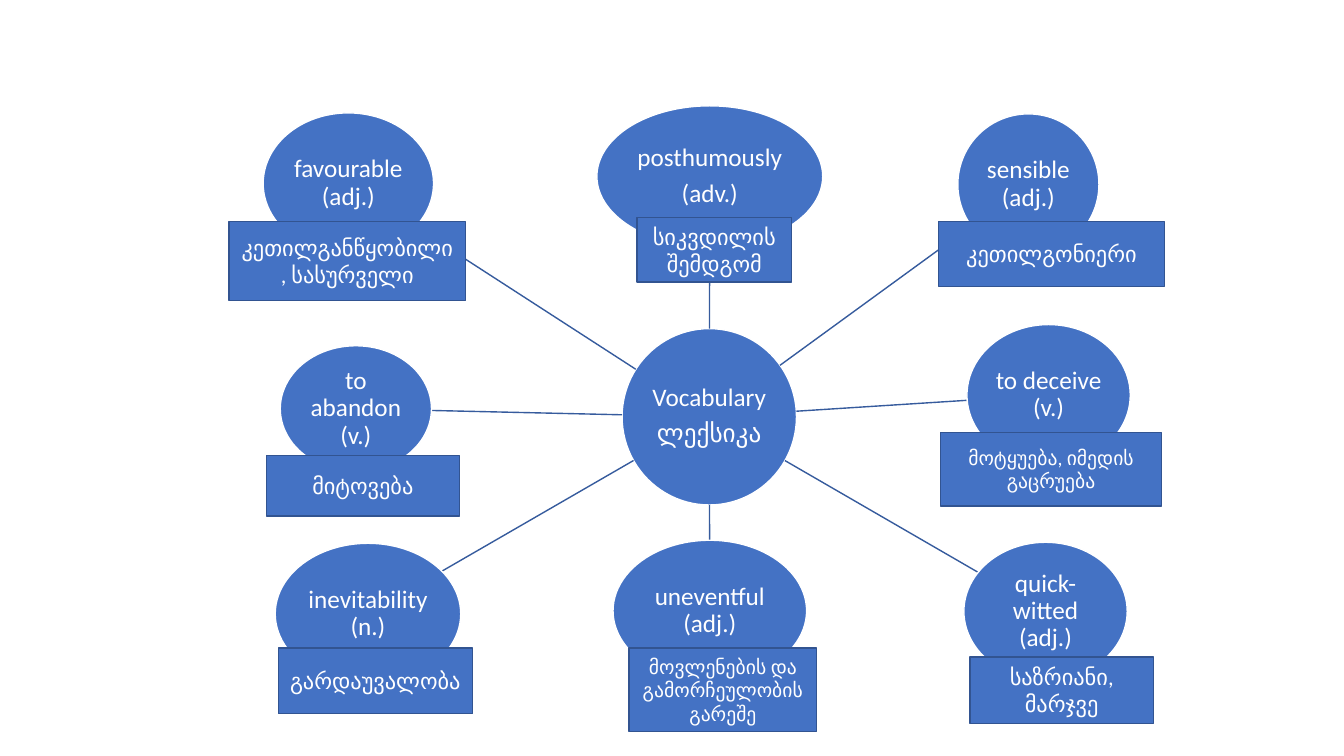
from math import hypot

from lxml.etree import SubElement
from pptx import Presentation
from pptx.dml.color import RGBColor
from pptx.enum.shapes import MSO_CONNECTOR as Connector, MSO_SHAPE as Shape
from pptx.enum.text import MSO_ANCHOR as Anchor, PP_ALIGN as Align
from pptx.oxml.ns import qn
from pptx.util import Inches, Pt

HUB = (6.17, 3.26, 1.73, 1.75)

WORDS = [
    ("posthumously\n(adv.)", (5.92, 1.05, 2.24, 1.4),
     "სიკვდილის შემდგომ", (6.32, 2.16, 1.53, 0.64), 16),
    ("sensible (adj.)", (9.5, 1.13, 1.4, 1.4),
     "კეთილგონიერი", (9.31, 2.2, 2.24, 0.64), 16),
    ("to deceive (v.)", (9.59, 3.22, 1.62, 1.4),
     "მოტყუება, იმედის გაცრუება", (9.33, 4.29, 2.19, 0.73), 14),
    ("quick-witted (adj.)", (9.56, 5.38, 1.62, 1.37),
     "საზრიანი, მარჯვე", (9.62, 6.52, 1.82, 0.66), 16),
    ("uneventful (adj.)", (6.08, 5.36, 1.92, 1.4),
     "მოვლენების და გამორჩეულობის გარეშე", (6.24, 6.43, 1.86, 0.83), 14),
    ("inevitability (n.)", (2.73, 5.39, 1.84, 1.4),
     "გარდაუვალობა", (2.76, 6.43, 1.93, 0.65), 16),
    ("to abandon (v.)", (2.78, 3.43, 1.5, 1.25),
     "მიტოვება", (2.64, 4.52, 1.92, 0.6), 16),
    ("favourable (adj.)", (2.61, 1.12, 1.69, 1.4),
     "კეთილგანწყობილი, სასურველი", (2.27, 2.2, 2.35, 0.78), 16),
]


def color(value):
    """Turn a hex string into a colour."""
    return RGBColor.from_string(value)


def rim_point(oval, target):
    """Find where the line between two oval centres leaves the first oval."""
    left, top, width, height = oval
    x, y = left + width / 2, top + height / 2
    dx = target[0] + target[2] / 2 - x
    dy = target[1] + target[3] / 2 - y
    scale = 1 / hypot(dx / (width / 2), dy / (height / 2))
    return x + dx * scale, y + dy * scale


class WordMap:
    """Draws the parts of a vocabulary map on one page."""

    font, fill, white = "Calibri", "4472C4", "FFFFFF"
    spoke_line, label_line = "365B9D", "325491"

    def __init__(self, page):
        """Keep the page to draw on."""
        self.page = page

    def block(self, kind, place, text, size, line):
        """Add a filled shape with centred text."""
        shape = self.page.shapes.add_shape(kind, *map(Inches, place))
        shape.shadow.inherit = False
        shape.fill.solid()
        shape.fill.fore_color.rgb = color(self.fill)
        shape.line.color.rgb = color(line)
        shape.line.width = Pt(1)
        frame = shape.text_frame
        frame.text = text
        frame.word_wrap = True
        frame.vertical_anchor = Anchor.MIDDLE
        for para in frame.paragraphs:
            para.alignment = Align.CENTER
            for span in para.runs:
                span.font.name = self.font
                span.font.size = Pt(size)
                span.font.color.rgb = color(self.white)
        return shape

    def oval(self, place, text):
        """Add a word oval with tight margins."""
        frame = self.block(Shape.OVAL, place, text, 18, self.white).text_frame
        frame.margin_left = frame.margin_right = Inches(0.01)
        frame.margin_top = frame.margin_bottom = Inches(0.01)
        for para in frame.paragraphs:
            para.line_spacing = 0.9
            para.space_after = Pt(6.3)

    def label(self, place, text, size):
        """Add a translation label."""
        self.block(Shape.RECTANGLE, place, text, size, self.label_line)

    def spoke(self, start, end):
        """Add a line between the rims of two ovals."""
        points = rim_point(start, end) + rim_point(end, start)
        line = self.page.shapes.add_connector(
            Connector.STRAIGHT, *map(Inches, points))
        line.line.color.rgb = color(self.spoke_line)
        line.line.width = Pt(1)
        SubElement(line._element.spPr, qn("a:effectLst"))


def main():
    """Build the vocabulary slide."""
    deck = Presentation()
    deck.slide_width, deck.slide_height = Inches(13.33), Inches(7.5)
    word_map = WordMap(deck.slides.add_slide(deck.slide_layouts[6]))
    word_map.oval(HUB, "Vocabulary\nლექსიკა")
    for word, oval, meaning, label, size in WORDS:
        word_map.spoke(HUB, oval)
        word_map.oval(oval, word)
        word_map.label(label, meaning, size)
    deck.save("out.pptx")


if __name__ == "__main__":
    main()
